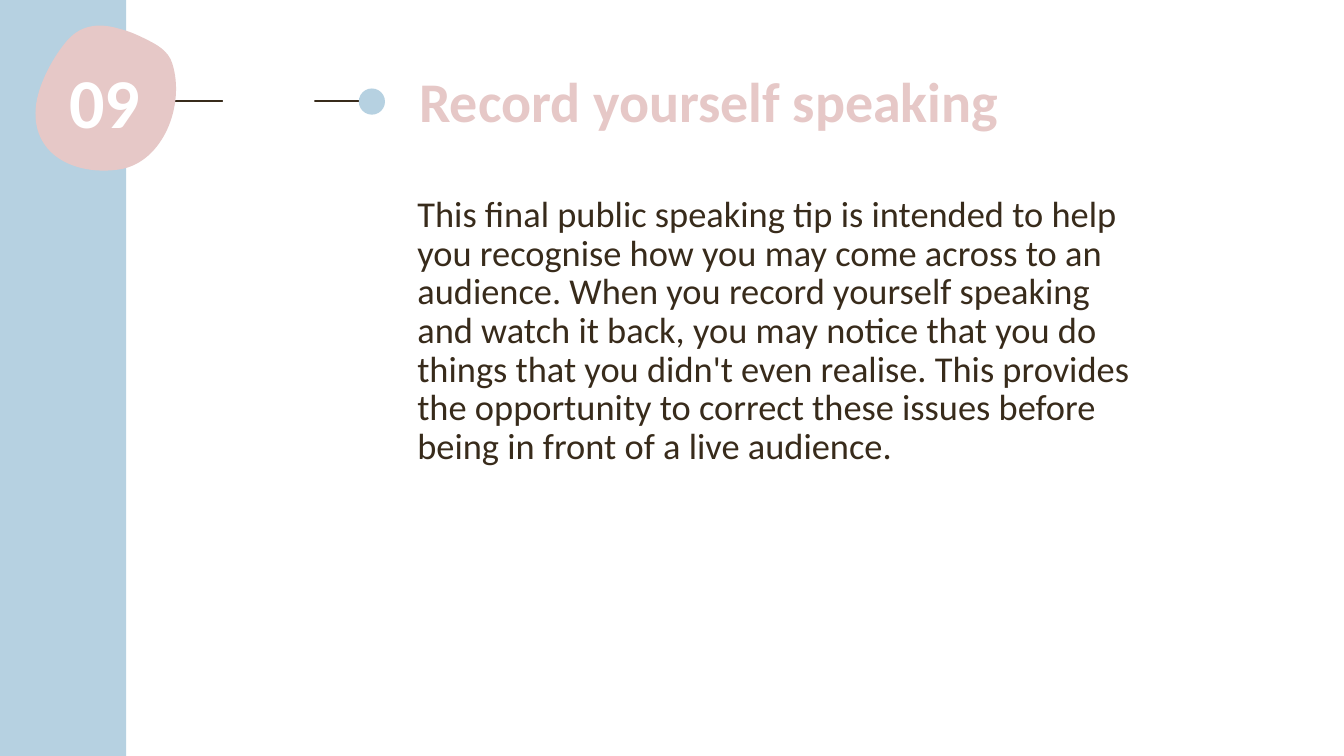
from typing import NamedTuple

from lxml import etree
from pptx import Presentation
from pptx import util as u
from pptx.dml.color import RGBColor
from pptx.enum import shapes, text
from pptx.oxml.ns import qn

COLOURS = {"blue": "B6D1E1", "pink": "E6C8C7", "brown": "382B1B", "white": "FFFFFF"}
Point = tuple[float, float]


class Area(NamedTuple):
    left: float
    top: float
    width: float
    height: float

    def lengths(self) -> list[u.Length]:
        return [u.Pt(value) for value in self]


class Block(NamedTuple):
    kind: shapes.MSO_SHAPE
    area: Area
    colour: str


class Curve(NamedTuple):
    first_control: Point
    second_control: Point
    end: Point


BLOCKS = [
    Block(shapes.MSO_SHAPE.OVAL, Area(256.3, 63.2, 18.7, 18.7), "blue"),
    Block(shapes.MSO_SHAPE.RECTANGLE, Area(159.1, 43.9, 65.5, 328.3), "white"),
    Block(shapes.MSO_SHAPE.RECTANGLE, Area(0, 0, 90.2, 540), "blue"),
]
BLOB_AREA = Area(25.2, 18, 100.8, 103.7)
BLOB_START = (86.4, 20.9)
BLOB_CURVES = [
    Curve((72.7, 16.6), (59, 16.6), (48.2, 28.8)),
    Curve((38.2, 40.3), (28.1, 59), (25.9, 74.2)),
    Curve((20.9, 110.2), (53.3, 126), (85.7, 121)),
    Curve((116.6, 115.9), (132.5, 74.9), (123.1, 45.4)),
    Curve((120.2, 36), (111.6, 31.7), (104.4, 28.1)),
    Curve((98.6, 25.2), (92.2, 22.3), BLOB_START),
]
BODY = (
    "This final public speaking tip is intended to help you recognise how you may "
    "come across to an audience. When you record yourself speaking and watch it back, "
    "you may notice that you do things that you didn't even realise. This provides the "
    "opportunity to correct these issues before being in front of a live audience."
)


def rgb(colour: str) -> RGBColor:
    return RGBColor.from_string(COLOURS[colour])


def paint(shape, colour: str) -> None:
    shape.shadow.inherit = False
    shape.fill.solid()
    shape.fill.fore_color.rgb = rgb(colour)
    shape.line.fill.background()


def add_block(page, block: Block) -> None:
    paint(page.shapes.add_shape(block.kind, *block.area.lengths()), block.colour)


def add_rule(page, start: Point, end: Point) -> None:
    rule = page.shapes.add_connector(
        shapes.MSO_CONNECTOR.STRAIGHT, *[u.Pt(value) for value in (*start, *end)]
    )
    rule.line.color.rgb = rgb("brown")
    rule.line.width = u.Pt(1.5)
    etree.SubElement(rule._element.spPr, qn("a:effectLst"))


def add_blob(page) -> None:
    """Frame the badge with a freeform, then give it a curved outline."""
    left, top, width, height = BLOB_AREA.lengths()
    builder = page.shapes.build_freeform(left, top)
    builder.add_line_segments(
        [(left + width, top), (left + width, top + height), (left, top + height)]
    )
    blob = builder.convert_to_shape()
    outline = next(blob._element.iter(qn("a:path")))
    for segment in list(outline):
        outline.remove(segment)
    segments = [("a:moveTo", (BLOB_START,))]
    segments += [("a:cubicBezTo", curve) for curve in BLOB_CURVES]
    for tag, points in segments:
        segment = etree.SubElement(outline, qn(tag))
        for x, y in points:
            spot = etree.SubElement(segment, qn("a:pt"))
            spot.set("x", str(u.Pt(x) - left))
            spot.set("y", str(u.Pt(y) - top))
    etree.SubElement(outline, qn("a:close"))
    paint(blob, "pink")


def write(box, area: Area, words: str, *, size: float, colour: str,
          spacing: u.Length | float, bold: bool = False,
          align: text.PP_ALIGN = text.PP_ALIGN.LEFT) -> None:
    box.left, box.top, box.width, box.height = area.lengths()
    frame = box.text_frame
    frame.word_wrap = True
    frame.auto_size = text.MSO_AUTO_SIZE.NONE
    frame.vertical_anchor = text.MSO_ANCHOR.TOP
    para = frame.paragraphs[0]
    para.alignment = align
    para.line_spacing = spacing
    para.space_before = u.Pt(0)
    properties = para._p.get_or_add_pPr()
    properties.set("marL", "0")
    properties.set("indent", "0")
    etree.SubElement(properties, qn("a:buNone"))
    span = para.add_run()
    span.text = words
    span.font.name = "Calibri"
    span.font.size = u.Pt(size)
    span.font.bold = bold
    span.font.color.rgb = rgb(colour)


def main() -> None:
    deck = Presentation()
    deck.slide_width, deck.slide_height = u.Pt(960), u.Pt(540)
    page = deck.slides.add_slide(deck.slide_layouts[1])
    add_rule(page, (262.1, 72.4), (108.7, 72.4))
    for block in BLOCKS:
        add_block(page, block)
    write(page.placeholders[1], Area(290.9, 136.4, 525, 164.2), BODY,
          size=26, colour="brown", spacing=u.Pt(27.6))
    write(page.shapes.title, Area(292.3, 51.8, 514.8, 127.4), "Record yourself speaking",
          size=40, colour="pink", spacing=u.Pt(40.2), bold=True)
    add_blob(page)
    number_area = Area(14, 45.4, 121.7, 67.7)
    write(page.shapes.add_textbox(*number_area.lengths()), number_area, "09",
          size=50, colour="white", spacing=0.9, bold=True, align=text.PP_ALIGN.CENTER)
    deck.save("out.pptx")


if __name__ == "__main__":
    main()
